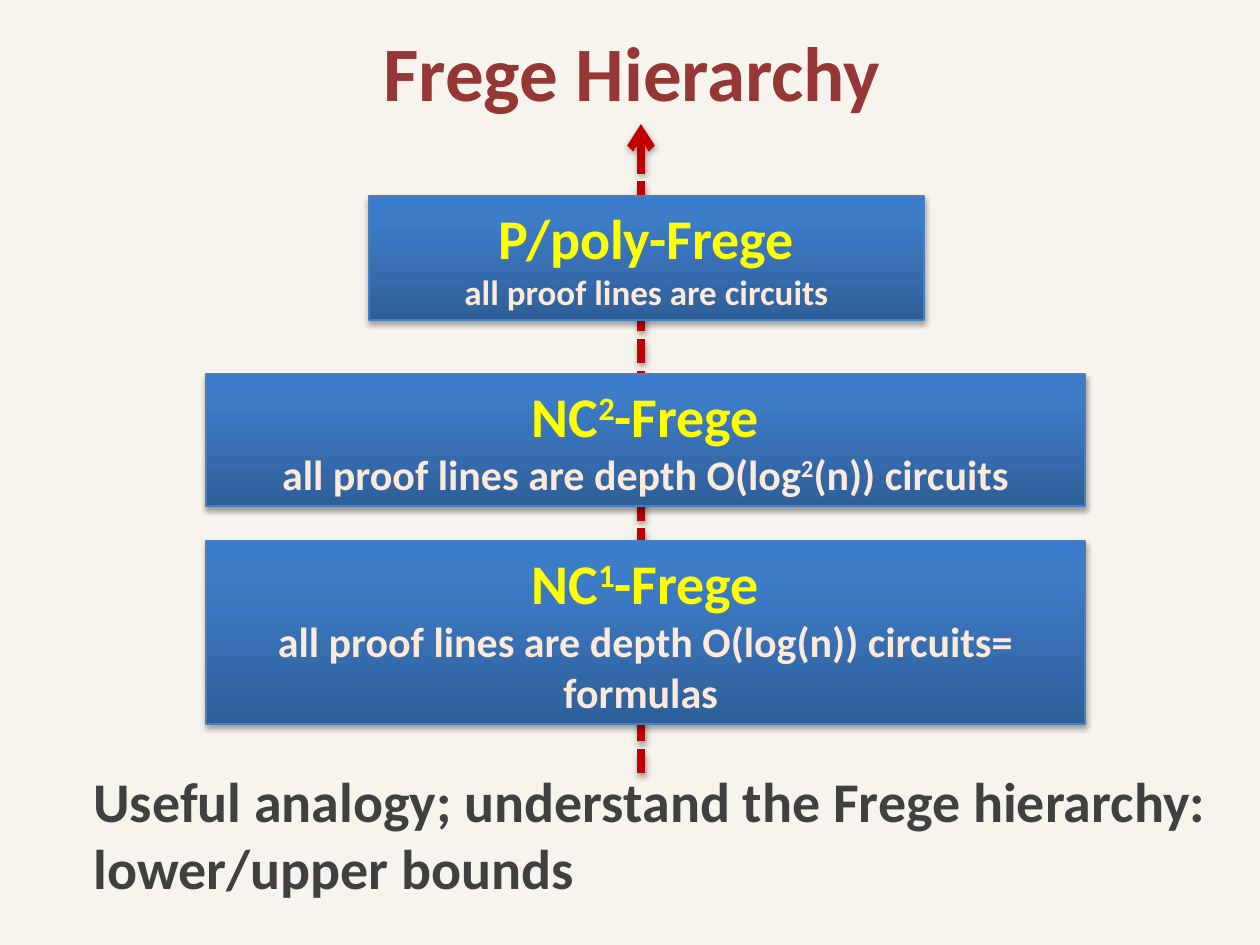
"""Build the Frege hierarchy slide."""
from copy import deepcopy
from dataclasses import dataclass

from lxml.etree import SubElement
from pptx import Presentation
from pptx.dml.color import RGBColor
from pptx.enum.dml import MSO_LINE
from pptx.enum.shapes import MSO_CONNECTOR, MSO_SHAPE
from pptx.enum.text import MSO_ANCHOR, MSO_AUTO_SIZE, PP_ALIGN
from pptx.oxml.ns import qn
from pptx.util import Emu, Pt

PX_PER_INCH = 126
FONT = "Calibri"
GRADIENT = ((0, "2F5F99"), (0.8, "3D7CC7"), (1, "3A7CCB"))
YELLOW = "FFFF00"
CREAM = "FDEADA"


@dataclass(frozen=True)
class Box:
    left: int
    top: int
    width: int
    height: int


@dataclass(frozen=True)
class Line:
    pieces: tuple[str, ...]
    size: int
    color: str


@dataclass(frozen=True)
class Level:
    box: Box
    name: Line
    description: Line


LEVELS = (
    Level(Box(369, 196, 555, 124),
          Line(("P/poly-Frege",), 32, YELLOW),
          Line(("all proof lines are circuits",), 20, CREAM)),
    Level(Box(206, 374, 879, 132),
          Line(("NC", "2", "-Frege"), 32, YELLOW),
          Line(("all proof lines are depth O(log", "2", "(n)) circuits"), 24, CREAM)),
    Level(Box(206, 541, 879, 183),
          Line(("NC", "1", "-Frege"), 32, YELLOW),
          Line(("all proof lines are depth O(log(n)) circuits= formulas ",), 24, CREAM)),
)


def px(length: int) -> Emu:
    return Emu(round(length * 914400 / PX_PER_INCH))


def rgb(color: str) -> RGBColor:
    return RGBColor.from_string(color)


def place(box: Box) -> tuple[Emu, ...]:
    return px(box.left), px(box.top), px(box.width), px(box.height)


def add_shadow(properties) -> None:
    effects = properties.find(qn("a:effectLst"))
    if effects is None:
        effects = SubElement(properties, qn("a:effectLst"))
    shadow = SubElement(effects, qn("a:outerShdw"), blurRad="40000", dist="23000",
                        dir="5400000", rotWithShape="0")
    color = SubElement(shadow, qn("a:srgbClr"), val="000000")
    SubElement(color, qn("a:alpha"), val="35000")


def write_lines(shape, lines: tuple[Line, ...], alignment: PP_ALIGN) -> None:
    """Write lines whose every second piece is a superscript."""
    frame = shape.text_frame
    frame.word_wrap = True
    frame.auto_size = MSO_AUTO_SIZE.SHAPE_TO_FIT_TEXT
    for number, line in enumerate(lines):
        paragraph = frame.add_paragraph() if number else frame.paragraphs[0]
        paragraph.alignment = alignment
        for index, piece in enumerate(line.pieces):
            run = paragraph.add_run()
            run.text = piece
            run.font.name = FONT
            run.font.size = Pt(line.size)
            run.font.bold = True
            run.font.color.rgb = rgb(line.color)
            if index % 2:
                run.font._element.set("baseline", "30000")


def add_text(slide, box: Box, line: Line, alignment: PP_ALIGN):
    shape = slide.shapes.add_textbox(*place(box))
    write_lines(shape, (line,), alignment)
    return shape


def add_level(slide, level: Level) -> None:
    shape = slide.shapes.add_shape(MSO_SHAPE.RECTANGLE, *place(level.box))
    shape.fill.gradient()
    shape.fill.gradient_angle = 90
    properties = shape._element.spPr
    stop_list = properties.find(qn("a:gradFill")).find(qn("a:gsLst"))
    stop_list.append(deepcopy(stop_list[0]))
    for stop, (position, color) in zip(shape.fill.gradient_stops, GRADIENT):
        stop.position = position
        stop.color.rgb = rgb(color)
    shape.line.color.rgb = rgb("4B7EBC")
    shape.line.width = Pt(0.75)
    shape.shadow.inherit = False
    add_shadow(properties)
    shape.text_frame.vertical_anchor = MSO_ANCHOR.MIDDLE
    write_lines(shape, (level.name, level.description), PP_ALIGN.CENTER)


def add_axis(slide, x: int, bottom: int, top: int):
    axis = slide.shapes.add_connector(
        MSO_CONNECTOR.STRAIGHT, px(x), px(bottom), px(x), px(top))
    axis.line.color.rgb = rgb("C00000")
    axis.line.width = Pt(4.5)
    axis.line.dash_style = MSO_LINE.SQUARE_DOT
    properties = axis._element.spPr
    SubElement(properties.find(qn("a:ln")), qn("a:tailEnd"), type="arrow")
    add_shadow(properties)
    return axis


def main() -> None:
    presentation = Presentation()
    presentation.slide_width = px(1260)
    presentation.slide_height = px(945)
    slide = presentation.slides.add_slide(presentation.slide_layouts[6])
    slide.background.fill.solid()
    slide.background.fill.fore_color.rgb = rgb("F7F4ED")

    axis = add_axis(slide, 641, 773, 124)
    title = add_text(slide, Box(79, 18, 1124, 106),
                     Line(("Frege Hierarchy ",), 44, "953735"), PP_ALIGN.CENTER)
    axis.end_connect(title, 2)
    for level in LEVELS:
        add_level(slide, level)
    add_text(slide, Box(81, 760, 1148, 149),
             Line(("Useful analogy; understand the Frege hierarchy: lower/upper bounds",),
                  32, "404040"), PP_ALIGN.LEFT)
    presentation.save("out.pptx")


if __name__ == "__main__":
    main()
